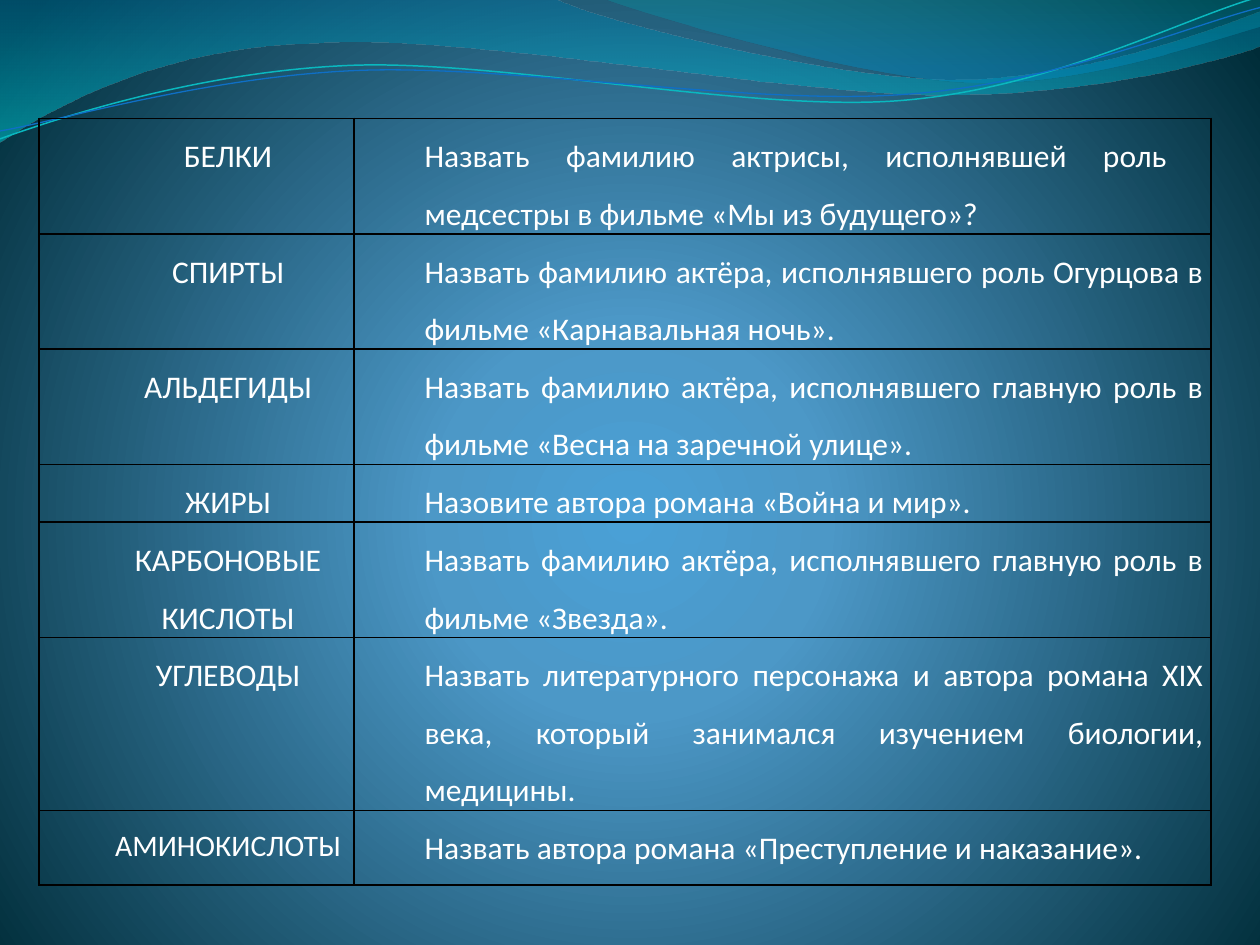
from lxml import etree
from pptx import Presentation
from pptx.dml.color import RGBColor
from pptx.enum.text import PP_ALIGN as Align
from pptx.oxml.ns import qn
from pptx.util import Inches, Pt

WHITE = RGBColor(0xFF, 0xFF, 0xFF)
BLACK = RGBColor(0x00, 0x00, 0x00)
SKY = RGBColor(0x4A, 0xA0, 0xD6)
STEEL = RGBColor(0x4C, 0x98, 0xC7)
NIGHT = RGBColor(0x00, 0x2C, 0x38)
OCEAN = RGBColor(0x00, 0x74, 0xA1)
CYAN = RGBColor(0x00, 0xC6, 0xCF)
TEAL = RGBColor(0x00, 0xA1, 0xA9)
AZURE = RGBColor(0x00, 0x8B, 0xBF)
AQUA = RGBColor(0x0A, 0xB8, 0xBF)
BLUE = RGBColor(0x0F, 0x6F, 0xC6)

FONT = "Calibri"

BANDS = [
    (
        [(0, 0), (4.4, -0.01), (4.76, 0.17, 6.64, 0.63, 7.58, 0.63),
         (8.53, 0.63, 9.58, 0.26, 10, 0.09), (10.01, 0.36),
         (9.83, 0.44, 8.7, 0.76, 7.46, 0.75),
         (6.22, 0.75, 3.82, 0.28, 2.57, 0.34),
         (1.29, 0.36, 0.46, 0.83, -0.01, 1.13)],
        [(0, OCEAN, 45), (100, CYAN, 55)],
    ),
    (
        [(4.79, -0.01), (5.09, 0.11, 6.82, 0.62, 7.69, 0.65),
         (8.56, 0.69, 9.61, 0.32, 10, 0.21), (10, 0)],
        [(0, TEAL, 30), (80, AZURE, 45)],
    ),
]
STRANDS = [
    (
        [(-0.02, 1.11), (0.48, 0.93, 1.58, 0.57, 2.77, 0.52),
         (3.95, 0.47, 5.93, 0.89, 7.13, 0.8),
         (8.33, 0.71, 9.38, 0.15, 9.98, -0.02)],
        AQUA, 0.85,
    ),
    (
        [(0, 1.04), (0.47, 0.96, 1.64, 0.61, 2.83, 0.56),
         (4.03, 0.51, 5.97, 0.84, 7.17, 0.75),
         (8.36, 0.67, 9.41, 0.21, 10, 0.06)],
        BLUE, 0.75,
    ),
]

COLUMN_WIDTHS = [2.5, 6.8]
SIDE_MARGIN = 0.06
FIRST_QUESTION_MARGIN = 0.35
ROWS = [
    (0.59, "БЕЛКИ", 18, "Назвать фамилию актрисы, исполнявшей роль медсестры в фильме «Мы из будущего»?"),
    (0.59, "СПИРТЫ", 18, "Назвать фамилию актёра, исполнявшего роль Огурцова в фильме «Карнавальная ночь»."),
    (0.89, "АЛЬДЕГИДЫ", 18, "Назвать фамилию актёра, исполнявшего главную роль в фильме «Весна на заречной улице»."),
    (0.3, "ЖИРЫ", 18, "Назовите автора романа «Война и мир»."),
    (0.59, "КАРБОНОВЫЕ КИСЛОТЫ", 18, "Назвать фамилию актёра, исполнявшего главную роль в фильме «Звезда»."),
    (0.89, "УГЛЕВОДЫ", 18, "Назвать литературного персонажа и автора романа XIX века, который занимался изучением биологии, медицины."),
    (0.59, "АМИНОКИСЛОТЫ", 17, "Назвать автора романа «Преступление и наказание»."),
]


def add_node(parent, tag, **attributes):
    return etree.SubElement(parent, qn(tag), {key: str(value) for key, value in attributes.items()})


def make_gradient(stops):
    gradient = etree.Element(qn("a:gradFill"), rotWithShape="1")
    stop_list = add_node(gradient, "a:gsLst")
    for position, color, opacity in stops:
        stop = add_node(stop_list, "a:gs", pos=position * 1000)
        tint = add_node(stop, "a:srgbClr", val=color)
        if opacity < 100:
            add_node(tint, "a:alpha", val=opacity * 1000)
    return gradient


def paint_background(page):
    page.background.fill.solid()
    holder = page.element.find(".//" + qn("p:bgPr"))
    gradient = make_gradient([(0, SKY, 100), (25, STEEL, 100), (100, NIGHT, 100)])
    center = add_node(gradient, "a:path", path="circle")
    add_node(center, "a:fillToRect", l=10000, t=110000, r=10000, b=100000)
    holder.replace(holder.find(qn("a:solidFill")), gradient)


def bend_segments(shape, steps):
    segments = list(shape.element.iter(qn("a:lnTo")))
    for segment, step in zip(segments, steps):
        if len(step) == 2:
            continue
        curve = etree.Element(qn("a:cubicBezTo"))
        for x, y in zip(step[::2], step[1::2]):
            add_node(curve, "a:pt", x=Inches(x) - shape.left, y=Inches(y) - shape.top)
        segment.getparent().replace(segment, curve)


def add_outline(page, outline, close):
    anchors = [(Inches(step[-2]), Inches(step[-1])) for step in outline]
    builder = page.shapes.build_freeform(*anchors[0])
    builder.add_line_segments(anchors[1:], close=close)
    shape = builder.convert_to_shape()
    bend_segments(shape, outline[1:])
    shape.shadow.inherit = False
    shape.fill.background()
    return shape


def add_waves(page):
    for outline, stops in BANDS:
        band = add_outline(page, outline, True)
        band.line.fill.background()
        gradient = make_gradient(stops)
        add_node(gradient, "a:lin", ang=5400000, scaled=0)
        properties = band.element.spPr
        properties.replace(properties.find(qn("a:noFill")), gradient)
    for outline, color, width in STRANDS:
        strand = add_outline(page, outline, False)
        strand.line.color.rgb = color
        strand.line.width = Pt(width)


def add_borders(cell):
    properties = cell._tc.get_or_add_tcPr()
    for side in ("a:lnL", "a:lnR", "a:lnT", "a:lnB"):
        border = add_node(properties, side, w=Pt(1))
        add_node(add_node(border, "a:solidFill"), "a:srgbClr", val=BLACK)


def fill_cell(cell, text, size, alignment):
    add_borders(cell)
    cell.fill.background()
    cell.margin_left = cell.margin_right = Inches(SIDE_MARGIN)
    cell.margin_top = cell.margin_bottom = 0
    para = cell.text_frame.paragraphs[0]
    para.alignment = alignment
    para.line_spacing = 1.5
    indent = para._p.get_or_add_pPr()
    indent.set("marL", str(Inches(0.5)))
    indent.set("indent", "0")
    span = para.add_run()
    span.text = text
    span.font.name = FONT
    span.font.size = Pt(size)
    span.font.color.rgb = WHITE


def add_questions(page, left, top, width, height):
    table = page.shapes.add_table(len(ROWS), len(COLUMN_WIDTHS), left, top, width, height).table
    table.first_row = False
    table.horz_banding = False
    for column, column_width in zip(table.columns, COLUMN_WIDTHS):
        column.width = Inches(column_width)
    for row, (row_height, topic, topic_size, question) in zip(table.rows, ROWS):
        row.height = Inches(row_height)
        fill_cell(row.cells[0], topic, topic_size, Align.CENTER)
        fill_cell(row.cells[1], question, 18, Align.JUSTIFY)
    table.cell(0, 1).margin_right = Inches(FIRST_QUESTION_MARGIN)


def main():
    deck = Presentation()
    deck.slide_width = Inches(10)
    deck.slide_height = Inches(7.5)
    page = deck.slides.add_slide(deck.slide_layouts[6])
    paint_background(page)
    add_waves(page)
    add_questions(page, Inches(0.31), Inches(0.94), Inches(9.3), Inches(5.99))
    deck.save("out.pptx")


if __name__ == "__main__":
    main()
